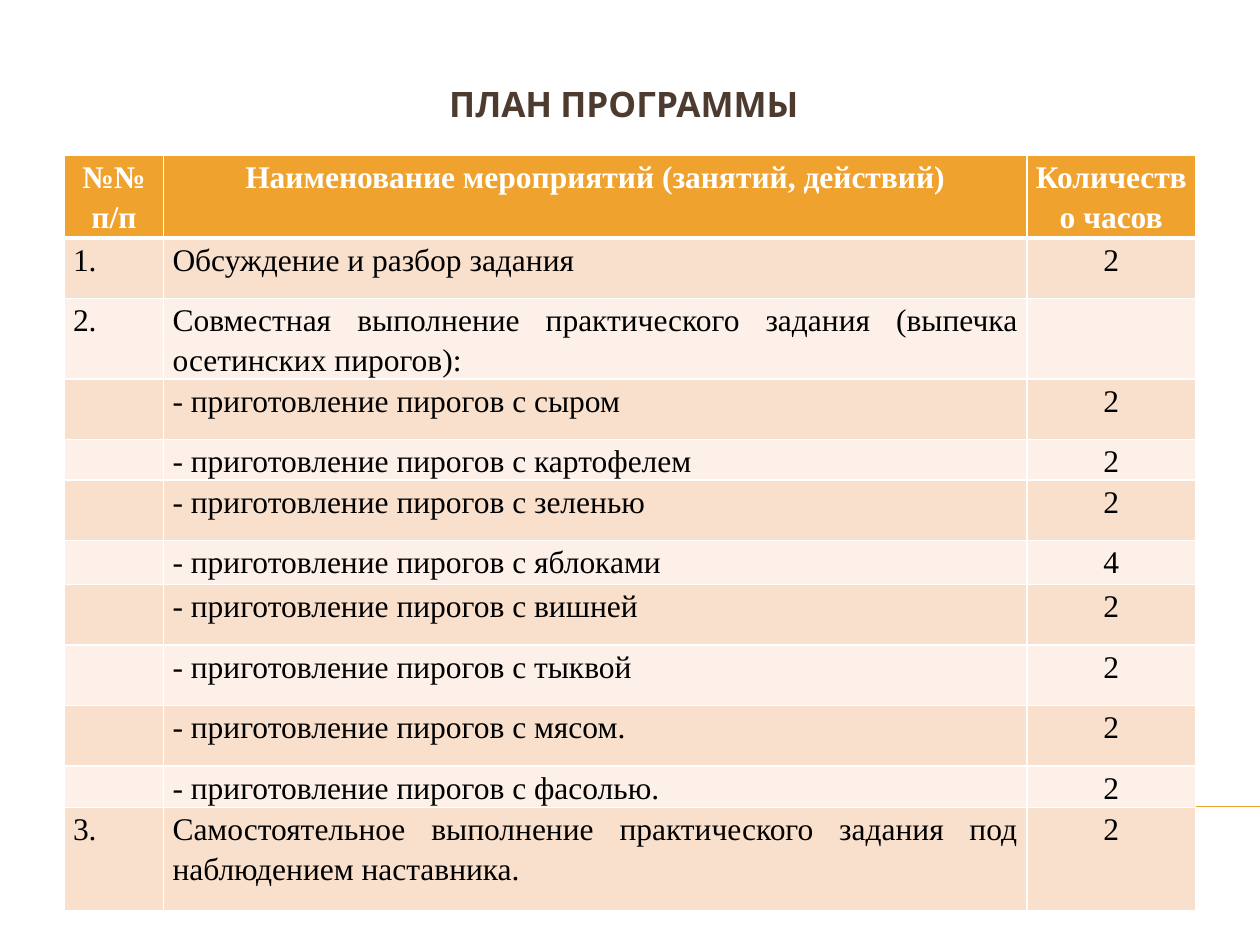
from lxml import etree
from pptx import Presentation
from pptx.dml.color import RGBColor
from pptx.enum.shapes import MSO_CONNECTOR
from pptx.enum.text import MSO_ANCHOR, PP_ALIGN
from pptx.oxml.ns import qn
from pptx.util import Inches, Pt

CENTER, JUSTIFY = PP_ALIGN.CENTER, PP_ALIGN.JUSTIFY
COLORS = {"accent": "F0A22E", "title": "4E3B30", "odd": "F9E0CD",
          "even": "FCF0E8", "white": "FFFFFF", "text": "000000"}

# Content: number, activity, hours, row height
TITLE = "ПЛАН ПРОГРАММЫ"
ROWS = [
    ("№№\nп/п", "Наименование мероприятий (занятий, действий)", "Количество часов", 0.66),
    ("1.", "Обсуждение и разбор задания", "2", 0.48),
    ("2.", "Совместная выполнение практического задания (выпечка осетинских пирогов):", "", 0.64),
    ("", "- приготовление пирогов с сыром", "2", 0.48),
    ("", "- приготовление пирогов с картофелем", "2", 0.32),
    ("", "- приготовление пирогов с зеленью", "2", 0.48),
    ("", "- приготовление пирогов с яблоками", "4", 0.35),
    ("", "- приготовление пирогов с вишней", "2", 0.48),
    ("", "- приготовление пирогов с тыквой", "2", 0.48),
    ("", "- приготовление пирогов с мясом.", "2", 0.48),
    ("", "- приготовление пирогов с фасолью.", "2", 0.33),
    ("3.", "Самостоятельное выполнение практического задания под наблюдением наставника.", "2", 0.82),
]
COLUMN_WIDTHS = [0.79, 6.85, 1.34]
CELL_MARGINS = {"margin_left": Inches(0.07), "margin_right": Inches(0.07),
                "margin_top": 0, "margin_bottom": 0}


def rgb(name):
    return RGBColor.from_string(COLORS[name])


def style_font(font, color, **values):
    for name, value in values.items():
        setattr(font, name, value)
    font.color.rgb = rgb(color)


def add_borders(cell, bottom):
    properties = cell._tc.get_or_add_tcPr()
    for side, points in {"L": 1, "R": 1, "T": 1, "B": bottom}.items():
        line = etree.SubElement(properties, qn(f"a:ln{side}"), w=str(Pt(points)))
        fill = etree.SubElement(line, qn("a:solidFill"))
        etree.SubElement(fill, qn("a:srgbClr"), val=COLORS["white"])


def fill_cell(cell, text, row, column):
    header = row == 0
    for name, value in CELL_MARGINS.items():
        setattr(cell, name, value)
    add_borders(cell, 3 if header else 1)
    cell.fill.solid()
    cell.fill.fore_color.rgb = rgb("accent" if header else "odd" if row % 2 else "even")
    if not text:
        return
    cell.text = text
    for para in cell.text_frame.paragraphs:
        para.alignment = CENTER if header or column == 2 else JUSTIFY
        para.line_spacing = 1.15
        for span in para.runs:
            style_font(span.font, "white" if header else "text",
                       name="Times New Roman", size=Pt(18), bold=header)


deck = Presentation()
deck.slide_width, deck.slide_height = Inches(10), Inches(7.5)
page = deck.slides.add_slide(deck.slide_layouts[5])

# Title
title = page.shapes.title
title.left, title.top, title.width, title.height = map(Inches, (0.59, 0.58, 8.72, 0.49))
frame = title.text_frame
frame.text = TITLE
frame.word_wrap = True
frame.vertical_anchor = MSO_ANCHOR.MIDDLE
frame.paragraphs[0].alignment = CENTER
style_font(frame.paragraphs[0].runs[0].font, "title", name="Cabin", size=Pt(20), bold=True)

# Rule running behind the table to the right edge
rule = page.shapes.add_connector(MSO_CONNECTOR.STRAIGHT, Inches(0.56), Inches(6.4),
                                 Inches(10), Inches(6.4))
rule.line.color.rgb = rgb("accent")
rule.line.width = Pt(0.75)
etree.SubElement(rule._element.spPr, qn("a:effectLst"))

# Programme table
heights = [row[-1] for row in ROWS]
table = page.shapes.add_table(len(ROWS), len(COLUMN_WIDTHS), Inches(0.51), Inches(1.23),
                              Inches(sum(COLUMN_WIDTHS)), Inches(sum(heights))).table
for column, width in enumerate(COLUMN_WIDTHS):
    table.columns[column].width = Inches(width)
for row, (*texts, height) in enumerate(ROWS):
    table.rows[row].height = Inches(height)
    for column, text in enumerate(texts):
        fill_cell(table.cell(row, column), text, row, column)

deck.save("out.pptx")
